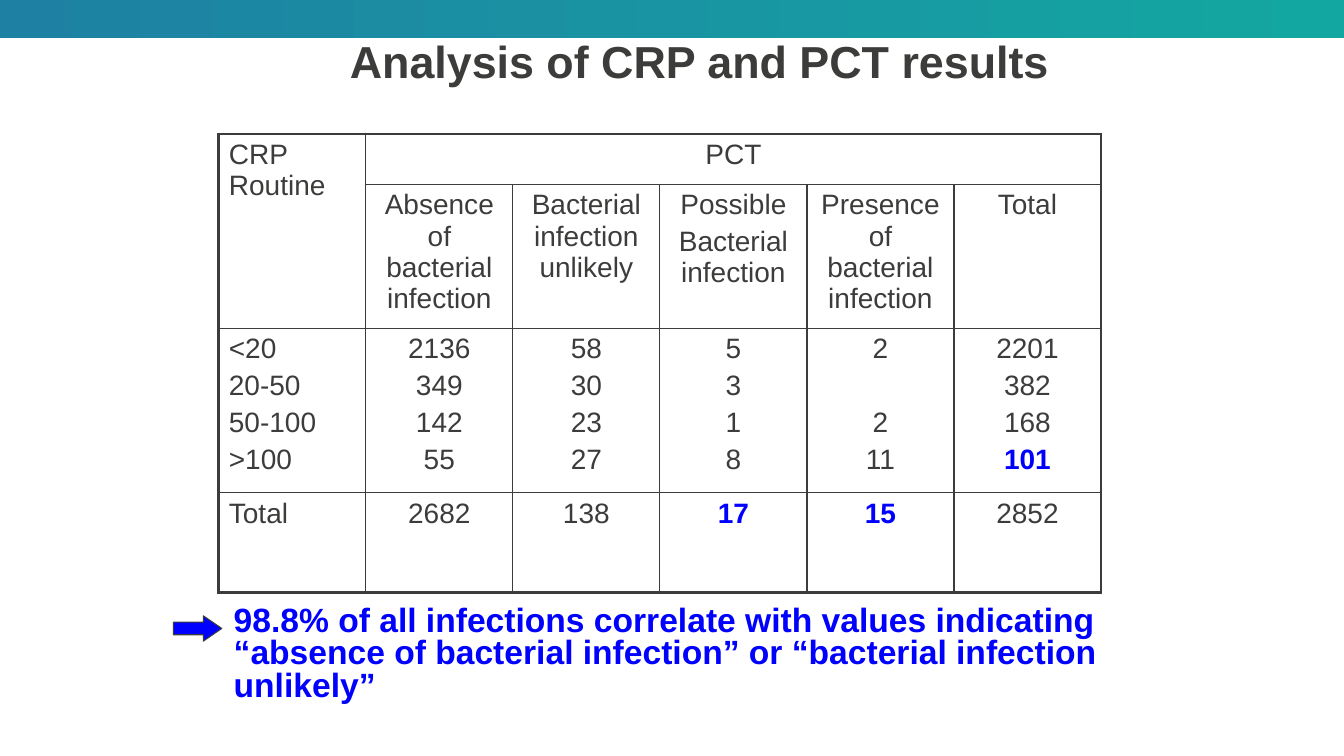
from lxml.etree import SubElement
from pptx import Presentation
from pptx.dml.color import RGBColor
from pptx.enum.shapes import MSO_SHAPE as SHAPE
from pptx.enum.text import MSO_ANCHOR as ANCHOR, MSO_AUTO_SIZE as FIT, PP_ALIGN as ALIGN
from pptx.oxml.ns import qn
from pptx.util import Inches, Pt

INK, BLUE = "3C3C3B", "0000FF"
WIDE = 13.33
ROWS = [0.5, 1.43, 1.63, 0.99]
HEADS = ["Absence of bacterial infection", "Bacterial infection unlikely",
         "Possible\nBacterial infection", "Presence of bacterial infection", "Total"]
BANDS = ["<20", "20-50", "50-100", ">100"]
COUNTS = [["2136", "349", "142", "55"], ["58", "30", "23", "27"], ["5", "3", "1", "8"],
          ["2", "", "2", "11"], ["2201", "382", "168", "101"]]
TOTALS = ["Total", "2682", "138", "17", "15", "2852"]
KEYS = {"101", "17", "15"}
CLAIM = ("98.8% of all infections correlate with values indicating\n"
         "“absence of bacterial infection” or “bacterial infection unlikely”")


def color(code):
    return RGBColor.from_string(code)


def style(par, size, code, bold=False):
    for run in par.runs:
        font = run.font
        font.name, font.size, font.bold = "Arial", Pt(size), bold
        font.color.rgb = color(code)


def add_band(slide, x, y, w, h):
    band = slide.shapes.add_shape(SHAPE.RECTANGLE, *map(Inches, (x, y, w, h)))
    band.shadow.inherit = False
    band.line.fill.background()
    band.fill.gradient()
    band.fill.gradient_angle = 0
    for stop, code in zip(band.fill.gradient_stops, ("1E81A3", "13A7A1")):
        stop.color.rgb = color(code)


def add_title(slide, x, y, w, h):
    title = slide.shapes.title
    title.left, title.top, title.width, title.height = map(Inches, (x, y, w, h))
    frame = title.text_frame
    frame.text = "Analysis of CRP and PCT results"
    frame.vertical_anchor, frame.auto_size = ANCHOR.TOP, FIT.NONE
    par = frame.paragraphs[0]
    par.alignment, par.line_spacing = ALIGN.LEFT, 0.9
    style(par, 32, INK, True)


def fill_cell(cell, text, align):
    """Write the lines of text; an empty line becomes space before the next one."""
    lines = text.split("\n")
    frame = cell.text_frame
    frame.text = "\n".join(filter(None, lines))
    gap, pars = 4, iter(frame.paragraphs)
    for line in lines:
        if not line:
            gap = 30
            continue
        par = next(pars)
        par.alignment, par.space_before = align, Pt(gap)
        style(par, 20, BLUE if line in KEYS else INK, line in KEYS)
        gap = 4


def add_edges(cell, outer):
    """Draw the four cell borders, thicker on the sides named in outer."""
    props = cell._tc.get_or_add_tcPr()
    for place, side in enumerate("LRTB"):
        width = Pt(2.25 if side in outer else 1)
        edge = SubElement(props, qn(f"a:ln{side}"), w=str(int(width)))
        props.insert(place, edge)
        paint = SubElement(edge, qn("a:solidFill"))
        SubElement(paint, qn("a:srgbClr"), val=INK)


def add_grid(slide, x, y, w, h):
    cols, last = len(TOTALS), len(ROWS) - 1
    table = slide.shapes.add_table(len(ROWS), cols, *map(Inches, (x, y, w, h))).table
    table.first_row = table.horz_banding = False
    for row, high in zip(table.rows, ROWS):
        row.height = Inches(high)
    for col in table.columns:
        col.width = Inches(w / cols)
    table.cell(0, 0).merge(table.cell(1, 0))
    table.cell(0, 1).merge(table.cell(0, cols - 1))

    body = ["\n".join(lines) for lines in [BANDS] + COUNTS]
    texts = [["CRP Routine", "PCT"], [""] + HEADS, body, TOTALS]
    for r, row in enumerate(table.rows):
        for c, cell in enumerate(row.cells):
            cell.fill.background()
            end = c + (cell.span_width if cell.is_merge_origin else 1)
            sides = {"L": c == 0, "R": end == cols, "T": r == 0, "B": r == last}
            add_edges(cell, [side for side in sides if sides[side]])
            if not cell.is_spanned:
                fill_cell(cell, texts[r][c], ALIGN.CENTER if c else ALIGN.LEFT)


def add_claim(slide, x, y, w, h):
    arrow = slide.shapes.add_shape(SHAPE.RIGHT_ARROW, Inches(x), Inches(y + 0.14),
                                   Inches(0.48), Inches(0.25))
    arrow.adjustments[1] = 0.73
    arrow.shadow.inherit = False
    arrow.fill.solid()
    arrow.fill.fore_color.rgb = color(BLUE)
    arrow.line.color.rgb = color(INK)
    arrow.line.width = Pt(0.75)

    box = slide.shapes.add_textbox(Inches(x + 0.5), Inches(y), Inches(w - 0.5), Inches(h))
    frame = box.text_frame
    frame.word_wrap = True
    frame.text = CLAIM
    for par in frame.paragraphs:
        par.line_spacing = 0.8
        style(par, 24, BLUE, True)


def main():
    deck = Presentation()
    deck.slide_width, deck.slide_height = Inches(WIDE), Inches(7.5)
    slide = deck.slides.add_slide(deck.slide_layouts[5])
    add_band(slide, 0, 0, WIDE, 0.38)
    add_title(slide, 3.37, 0.34, 8.17, 1.25)
    add_grid(slide, 2.17, 1.33, 8.75, sum(ROWS))
    add_claim(slide, 1.72, 5.97, 10.33, 1.2)
    deck.save("out.pptx")


if __name__ == "__main__":
    main()
